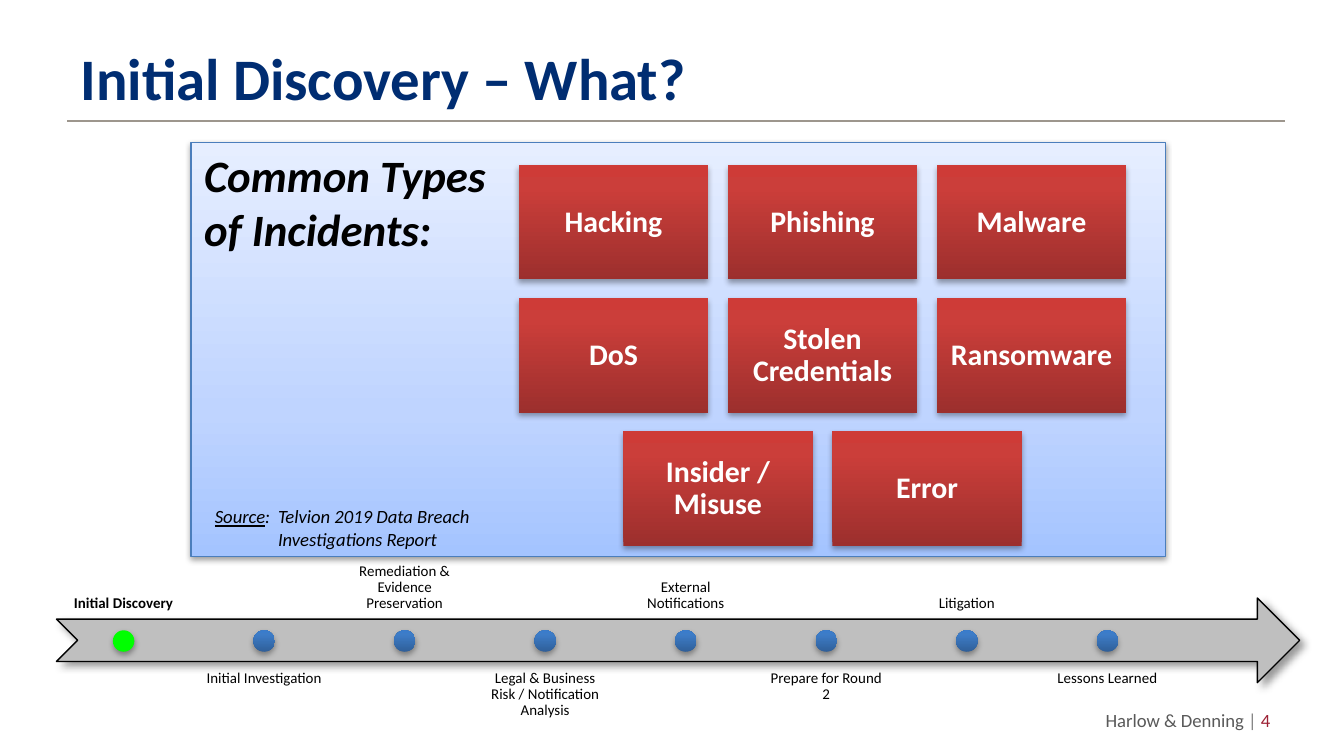
"""Build the Initial Discovery slide: incident types above a response timeline."""
from copy import deepcopy

from lxml.etree import SubElement
from pptx import Presentation
from pptx.dml.color import RGBColor
from pptx.enum.shapes import MSO_CONNECTOR, MSO_SHAPE
from pptx.enum.text import MSO_ANCHOR, MSO_AUTO_SIZE, PP_ALIGN
from pptx.oxml.ns import qn
from pptx.util import Inches, Pt

COLORS = {
    "title": "002D72", "rule": "9D968D", "panel_edge": "4B7EBC", "black": "000000",
    "white": "FFFFFF", "arrow": "BFBFBF", "current": "00FF00",
    "firm": "595959", "divider": "808080", "number": "9D2235",
}
GRADIENTS = {
    "panel": [(0, "A4C4FF"), (0.35, "BFD4FF"), (1, "E6EEFF")],
    "step": [(0, "2F5F99"), (0.8, "3D7CC7"), (1, "3A7CCB")],
    "incident": [(0, "9C2F2D"), (0.8, "CB3E3A"), (1, "CE3B37")],
}
TITLE = "Initial Discovery – What?"
HEADING = ["Common Types", "of Incidents:"]
SOURCE = [[("Source", {"underline": True}), (":\tTelvion 2019 Data Breach", {})],
          [("Investigations Report", {})]]
FOOTER = [("Harlow & Denning ", "firm"), ("| ", "divider"), ("4", "number")]
INCIDENT_ROWS = [
    ["Hacking", "Phishing", "Malware"],
    ["DoS", "Stolen Credentials", "Ransomware"],
    ["Insider / Misuse", "Error"],
]
STEPS = [
    "Initial Discovery", "Initial Investigation", "Remediation & Evidence Preservation",
    "Legal & Business Risk / Notification Analysis", "External Notifications",
    "Prepare for Round 2", "Litigation", "Lessons Learned",
]
SLIDE_WIDTH, SLIDE_HEIGHT = 10, 10 * 9 / 16
TILE_W, TILE_H, TILE_PITCH_X, TILE_PITCH_Y = 1.41, 0.85, 3.11 / 2, 0.99
TILES_CENTER, TILES_TOP = 6.12, 1.23
STEP_LEFT, STEP_PITCH, LABEL_W, LABEL_H, DOT = 0.42, 7.32 / 7, 1, 0.63, 0.16
SOURCE_INDENT = 0.47


def apply(target, values):
    for name, value in values.items():
        setattr(target, name, value)


def rgb(name):
    return RGBColor.from_string(COLORS[name])


def box(*lengths):
    return [Inches(length) for length in lengths]


def add_run(paragraph, text, size, color="black", **values):
    run = paragraph.add_run()
    run.text = text
    apply(run.font, {"name": "Calibri", "size": Pt(size), **values})
    run.font.color.rgb = rgb(color)


def set_frame(frame, anchor=MSO_ANCHOR.TOP, margin=None):
    apply(frame, {"word_wrap": True, "vertical_anchor": anchor})
    if margin is not None:
        sides = ("left", "right", "top", "bottom")
        apply(frame, {f"margin_{side}": Inches(margin) for side in sides})
    return frame


def add_text(slide, bounds, **values):
    return set_frame(slide.shapes.add_textbox(*box(*bounds)).text_frame, **values)


def write_centered(frame, text, size, **values):
    paragraph = frame.paragraphs[0]
    apply(paragraph, {"alignment": PP_ALIGN.CENTER, "line_spacing": 0.9})
    add_run(paragraph, text, size, **values)


def add_filled(slide, kind, bounds, fill, edge=None, shadow=(35, 3.1, 1.8, 90)):
    shape = slide.shapes.add_shape(kind, *box(*bounds))
    if fill in GRADIENTS:
        shape.fill.gradient()
        shape.fill.gradient_angle = 90
        stop_list = next(shape._element.spPr.iter(qn("a:gsLst")))
        stop_list.append(deepcopy(stop_list[0]))
        for stop, (position, color) in zip(shape.fill.gradient_stops, GRADIENTS[fill]):
            stop.position = position
            stop.color.rgb = RGBColor.from_string(color)
    else:
        shape.fill.solid()
        shape.fill.fore_color.rgb = rgb(fill)
    if edge:
        shape.line.color.rgb = rgb(edge)
        shape.line.width = Pt(0.75)
    else:
        shape.line.fill.background()
    shape.shadow.inherit = False
    alpha, blur, distance, direction = shadow
    effects = shape._element.spPr.find(qn("a:effectLst"))
    outer = SubElement(effects, qn("a:outerShdw"), blurRad=str(Pt(blur)),
                       dist=str(Pt(distance)), dir=str(direction * 60000), rotWithShape="0")
    tone = SubElement(outer, qn("a:srgbClr"), val=COLORS["black"])
    SubElement(tone, qn("a:alpha"), val=str(alpha * 1000))
    return shape


def add_header(slide):
    title = slide.shapes.title
    apply(title, dict(zip(("left", "top", "width", "height"), box(0.5, 0.23, 9.06, 0.68))))
    frame = set_frame(title.text_frame, MSO_ANCHOR.MIDDLE)
    frame.auto_size = MSO_AUTO_SIZE.NONE
    frame.paragraphs[0].alignment = PP_ALIGN.LEFT
    add_run(frame.paragraphs[0], TITLE, 31.5, "title", bold=True)
    rule = slide.shapes.add_connector(MSO_CONNECTOR.STRAIGHT, *box(0.5, 0.9, 9.56, 0.9))
    rule.line.color.rgb = rgb("rule")
    rule.line.width = Pt(0.75)
    SubElement(rule._element.spPr, qn("a:effectLst"))


def add_incidents(slide):
    add_filled(slide, MSO_SHAPE.RECTANGLE, (1.42, 1.06, 7.25, 3.08), "panel",
               "panel_edge", (38, 3.1, 1.6, 90))
    for row, incidents in enumerate(INCIDENT_ROWS):
        left = TILES_CENTER - ((len(incidents) - 1) * TILE_PITCH_X + TILE_W) / 2
        for column, incident in enumerate(incidents):
            bounds = (left + column * TILE_PITCH_X, TILES_TOP + row * TILE_PITCH_Y,
                      TILE_W, TILE_H)
            tile = add_filled(slide, MSO_SHAPE.RECTANGLE, bounds, "incident")
            frame = set_frame(tile.text_frame, MSO_ANCHOR.MIDDLE, 0.07)
            write_centered(frame, incident, 16, color="white", bold=True)

    heading = add_text(slide, (1.42, 1.05, 2.5, 0.91))
    for index, line in enumerate(HEADING):
        paragraph = heading.add_paragraph() if index else heading.paragraphs[0]
        add_run(paragraph, line, 24, bold=True, italic=True)

    source = add_text(slide, (1.5, 3.71, 2.19, 0.44))
    for index, line in enumerate(SOURCE):
        paragraph = source.add_paragraph() if index else source.paragraphs[0]
        properties = paragraph._p.get_or_add_pPr()
        properties.set("marL", str(Inches(SOURCE_INDENT)))
        properties.set("indent", str(0 if index else -Inches(SOURCE_INDENT)))
        for text, values in line:
            add_run(paragraph, text, 10, italic=True, **values)


def add_timeline(slide):
    add_filled(slide, MSO_SHAPE.NOTCHED_RIGHT_ARROW, (0.42, 4.45, 9.25, 0.63), "arrow",
               "black", (40, 4, 3, 45))
    for index, step in enumerate(STEPS):
        left = STEP_LEFT + index * STEP_PITCH
        current, below = index == 0, index % 2
        top, anchor = (4.93, MSO_ANCHOR.TOP) if below else (3.98, MSO_ANCHOR.BOTTOM)
        label = add_text(slide, (left, top, LABEL_W, LABEL_H), anchor=anchor, margin=0.06)
        write_centered(label, step, 8, bold=current)
        add_filled(slide, MSO_SHAPE.OVAL, (left + (LABEL_W - DOT) / 2, 4.69, DOT, DOT),
                   "current" if current else "step")


def add_footer(slide):
    footer = add_text(slide, (7.22, 5.22, 2.33, 0.27), anchor=MSO_ANCHOR.MIDDLE)
    footer.paragraphs[0].alignment = PP_ALIGN.RIGHT
    for text, color in FOOTER:
        add_run(footer.paragraphs[0], text, 10, color)


def main():
    deck = Presentation()
    apply(deck, {"slide_width": Inches(SLIDE_WIDTH), "slide_height": Inches(SLIDE_HEIGHT)})
    slide = deck.slides.add_slide(deck.slide_layouts[5])
    for add_part in (add_header, add_incidents, add_timeline, add_footer):
        add_part(slide)
    deck.save("out.pptx")


if __name__ == "__main__":
    main()
